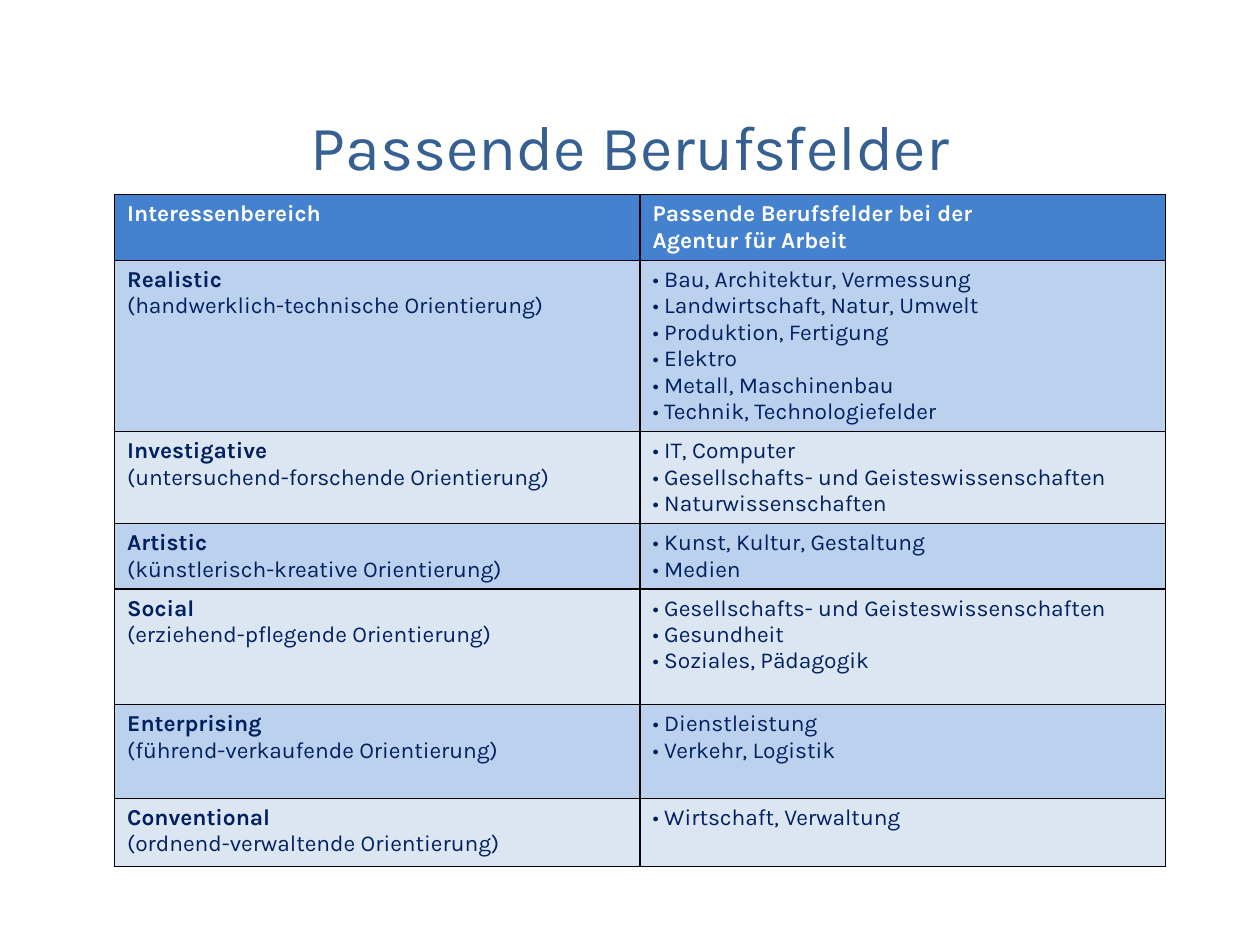
from dataclasses import dataclass

from lxml import etree
from pptx import Presentation
from pptx import util as u
from pptx.dml.color import RGBColor
from pptx.enum import text
from pptx.oxml import ns

SLIDE_WIDTH, SLIDE_HEIGHT = 10, 7.5
FONT = "Karla"
TITLE_BLUE, HEADER_BLUE, NAVY = "376092", "4482CF", "002060"
BANDS = ("BBD1EE", "DCE6F2")
WHITE, BLACK = "FFFFFF", "000000"
HANGING = 0.38


@dataclass(frozen=True)
class Interest:
    """One row: an area of interest, its orientation and its fields of work."""
    name: str
    orientation: str
    fields: tuple[str, ...]
    height: float


INTERESTS = (
    Interest("Realistic", "handwerklich-technische",
             ("Bau, Architektur, Vermessung", "Landwirtschaft, Natur, Umwelt",
              "Produktion, Fertigung", "Elektro", "Metall, Maschinenbau",
              "Technik, Technologiefelder"), 1.36),
    Interest("Investigative", "untersuchend-forschende",
             ("IT, Computer", "Gesellschafts- und Geisteswissenschaften",
              "Naturwissenschaften"), 0.73),
    Interest("Artistic", "künstlerisch-kreative",
             ("Kunst, Kultur, Gestaltung", "Medien"), 0.52),
    Interest("Social", "erziehend-pflegende",
             ("Gesellschafts- und Geisteswissenschaften", "Gesundheit",
              "Soziales, Pädagogik"), 0.92),
    Interest("Enterprising", "führend-verkaufende",
             ("Dienstleistung", "Verkehr, Logistik"), 0.74),
    Interest("Conventional", "ordnend-verwaltende",
             ("Wirtschaft, Verwaltung",), 0.54),
)
HEADER_HEIGHT = 0.52


def across(share: float) -> u.Length:
    """Turn a share of the slide's width into a length."""
    return u.Inches(SLIDE_WIDTH * share)


def down(share: float) -> u.Length:
    """Turn a share of the slide's height into a length."""
    return u.Inches(SLIDE_HEIGHT * share)


def color(value: str) -> RGBColor:
    """Turn a hex string into a colour."""
    return RGBColor.from_string(value)


def write(para, words: str, *, size: float = 13, fill: str = NAVY,
          bold: bool = False, hanging: float = 0, align=None) -> None:
    """Put one formatted span of words into a paragraph."""
    span = para.add_run()
    span.text = words
    span.font.name = FONT
    span.font.size = u.Pt(size)
    span.font.bold = bold
    span.font.color.rgb = color(fill)
    para.alignment = align
    if hanging:
        properties = para._p.get_or_add_pPr()
        properties.set("marL", str(u.Inches(hanging)))
        properties.set("indent", str(-u.Inches(hanging)))


def add_borders(cell, line: str = BLACK, width: float = 0.75) -> None:
    """Draw a thin line on all four sides of a cell."""
    properties = cell._tc.get_or_add_tcPr()
    for side in ("lnL", "lnR", "lnT", "lnB"):
        border = etree.SubElement(properties, ns.qn(f"a:{side}"), w=str(u.Pt(width)))
        solid = etree.SubElement(border, ns.qn("a:solidFill"))
        etree.SubElement(solid, ns.qn("a:srgbClr"), val=line)


def fill_cell(cell, lines: tuple[str, ...], background: str, *,
              fill: str = NAVY, bold_lines: int = 0, hanging: float = HANGING) -> None:
    """Give a cell its borders, background and lines, the first ones in bold."""
    add_borders(cell)
    cell.fill.solid()
    cell.fill.fore_color.rgb = color(background)
    frame = cell.text_frame
    for number, line in enumerate(lines):
        para = frame.add_paragraph() if number else frame.paragraphs[0]
        write(para, line, fill=fill, bold=number < bold_lines, hanging=hanging)


def add_title(page, words: str) -> None:
    """Place and format the title placeholder."""
    box = page.shapes.title
    box.left, box.top = across(0.129), down(0.104)
    box.width, box.height = across(0.742), down(0.1)
    box.text_frame.vertical_anchor = text.MSO_ANCHOR.MIDDLE
    write(box.text_frame.paragraphs[0], words, size=36, fill=TITLE_BLUE,
          align=text.PP_ALIGN.CENTER)


def add_interest_table(page, interests: tuple[Interest, ...]) -> None:
    """Add the table of interests and matching fields of work."""
    heights = [HEADER_HEIGHT] + [interest.height for interest in interests]
    frame = page.shapes.add_table(len(heights), 2, across(0.091), down(0.206),
                                  across(0.834), u.Inches(sum(heights)))
    table = frame.table
    for row, height in zip(table.rows, heights):
        row.height = u.Inches(height)

    fill_cell(table.cell(0, 0), ("Interessenbereich",), HEADER_BLUE,
              fill=WHITE, bold_lines=1)
    fill_cell(table.cell(0, 1), ("Passende Berufsfelder bei der", "Agentur für Arbeit"),
              HEADER_BLUE, fill=WHITE, bold_lines=2, hanging=0)
    for number, interest in enumerate(interests):
        background = BANDS[number % len(BANDS)]
        fill_cell(table.cell(number + 1, 0),
                  (interest.name, f"({interest.orientation} Orientierung)"),
                  background, bold_lines=1)
        fill_cell(table.cell(number + 1, 1),
                  tuple(f"• {field}" for field in interest.fields), background)


def main() -> None:
    """Build the slide and save it."""
    deck = Presentation()
    deck.slide_width, deck.slide_height = across(1), down(1)
    page = deck.slides.add_slide(deck.slide_layouts.get_by_name("Title Only"))
    add_title(page, "Passende Berufsfelder")
    add_interest_table(page, INTERESTS)
    deck.save("out.pptx")


if __name__ == "__main__":
    main()
